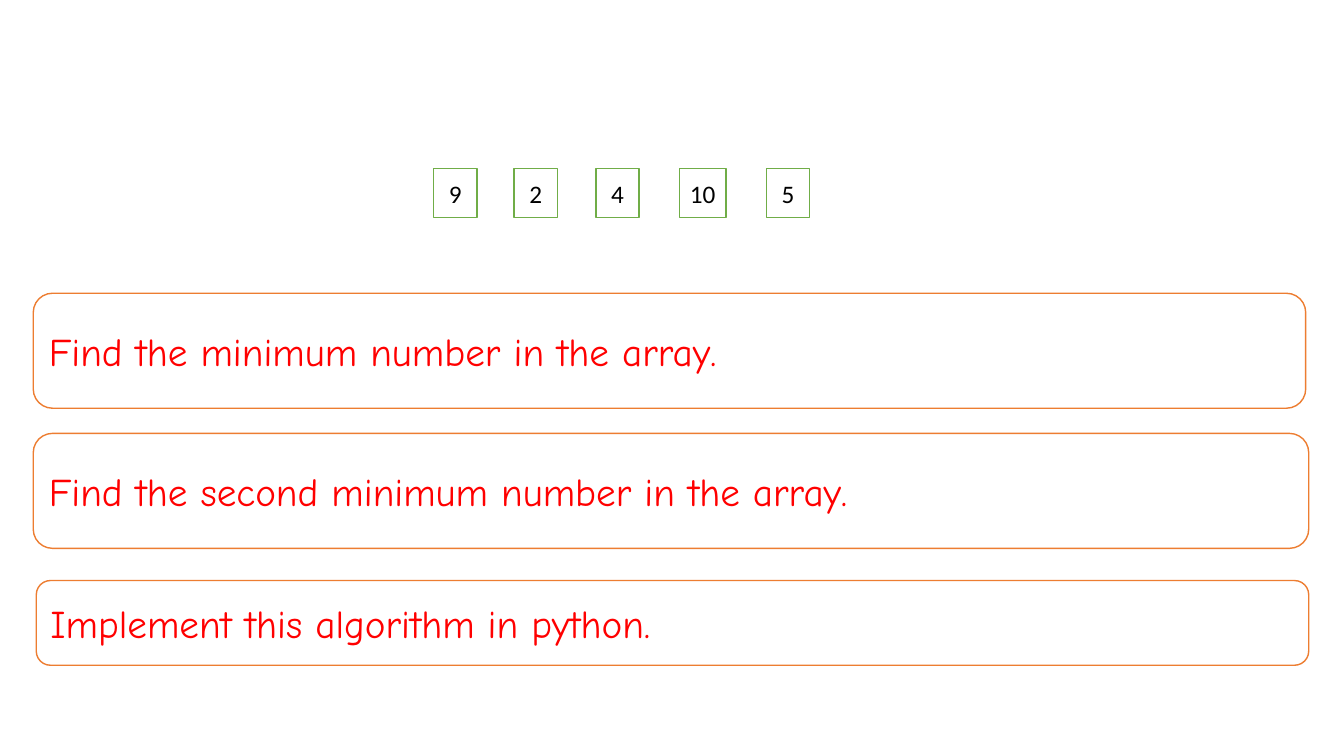
from pptx import Presentation
from pptx.dml.color import RGBColor
from pptx.enum.shapes import MSO_SHAPE
from pptx.enum.text import MSO_ANCHOR, PP_ALIGN
from pptx.util import Inches, Pt

ARRAY_CELLS = [
    ("9", 4.3, 0.43),
    ("2", 5.1, 0.43),
    ("4", 5.91, 0.43),
    ("10", 6.74, 0.46),
    ("5", 7.6, 0.43),
]
TASKS = [
    ("Find the minimum number in the array.", 0.33, 2.91, 12.62, 1.14),
    ("Find the second minimum number in the array.", 0.33, 4.3, 12.65, 1.14),
    ("Implement this algorithm in python.", 0.36, 5.76, 12.62, 0.84),
]


def color(value):
    return RGBColor.from_string(value)


def add_box(slide, kind, bounds, line_color):
    shape = slide.shapes.add_shape(kind, *map(Inches, bounds))
    shape.shadow.inherit = False
    shape.fill.solid()
    shape.fill.fore_color.rgb = color("FFFFFF")
    shape.line.color.rgb = color(line_color)
    shape.line.width = Pt(1)
    return shape


def set_text(shape, text, font_name, size, text_color, alignment):
    text_frame = shape.text_frame
    text_frame.word_wrap = True
    text_frame.vertical_anchor = MSO_ANCHOR.MIDDLE
    text_frame.text = text
    paragraph = text_frame.paragraphs[0]
    paragraph.alignment = alignment
    font = paragraph.runs[0].font
    font.name = font_name
    font.size = Pt(size)
    font.color.rgb = color(text_color)


def add_array_cell(slide, number, left, width):
    shape = add_box(slide, MSO_SHAPE.RECTANGLE, (left, 1.67, width, 0.49), "70AD47")
    set_text(shape, number, "Calibri", 18, "000000", PP_ALIGN.CENTER)


def add_task(slide, text, *bounds):
    shape = add_box(slide, MSO_SHAPE.ROUNDED_RECTANGLE, bounds, "ED7D31")
    set_text(shape, text, "Comic Neue", 28, "FF0000", PP_ALIGN.LEFT)


def main():
    presentation = Presentation()
    presentation.slide_width = Inches(13.33)
    presentation.slide_height = Inches(7.5)
    slide = presentation.slides.add_slide(presentation.slide_layouts[6])
    for cell in ARRAY_CELLS:
        add_array_cell(slide, *cell)
    for task in TASKS:
        add_task(slide, *task)
    presentation.save("out.pptx")


if __name__ == "__main__":
    main()
